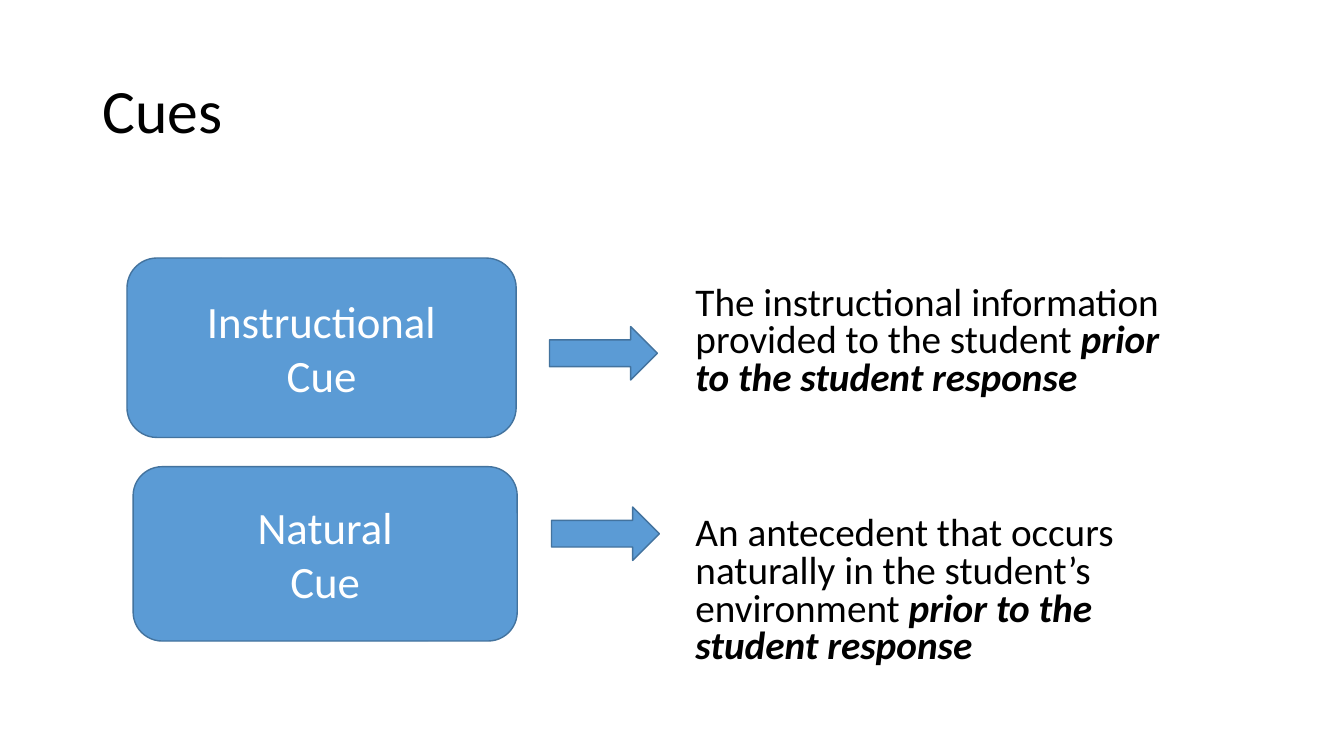
from dataclasses import dataclass

from pptx import Presentation
from pptx.dml.color import RGBColor
from pptx.enum.shapes import MSO_SHAPE
from pptx.enum.text import MSO_ANCHOR, PP_ALIGN
from pptx.util import Emu, Pt

ROUNDED = MSO_SHAPE.ROUNDED_RECTANGLE
ARROW = MSO_SHAPE.RIGHT_ARROW
TOP, MIDDLE = MSO_ANCHOR.TOP, MSO_ANCHOR.MIDDLE
LEFT, CENTER = PP_ALIGN.LEFT, PP_ALIGN.CENTER
EMU_PER_PX = 9144
BLANK_LAYOUT = 6


@dataclass(frozen=True)
class Theme:
    font: str = "Calibri"
    text: RGBColor = RGBColor(0, 0, 0)
    label: RGBColor = RGBColor(255, 255, 255)
    fill: RGBColor = RGBColor(0x5B, 0x9B, 0xD5)
    line: RGBColor = RGBColor(0x43, 0x73, 0x9E)
    title_size: int = 44
    label_size: int = 32
    body_size: int = 28


def set_attributes(target, values):
    for name, value in values.items():
        setattr(target, name, value)


class SlideBuilder:
    def __init__(self, slide, theme):
        self.slide = slide
        self.theme = theme

    def place(self, box):
        return [Emu(length * EMU_PER_PX) for length in box]

    def fill_text(self, shape, paragraphs, size, color, anchor, paragraph_format):
        frame = shape.text_frame
        set_attributes(frame, {"word_wrap": True, "vertical_anchor": anchor})
        for index, (runs, space_before) in enumerate(paragraphs):
            paragraph = frame.add_paragraph() if index else frame.paragraphs[0]
            set_attributes(paragraph, {**paragraph_format, "space_before": Pt(space_before)})
            for text, emphasis in runs:
                run = paragraph.add_run()
                run.text = text
                set_attributes(run.font, {
                    "name": self.theme.font, "size": Pt(size),
                    "bold": emphasis, "italic": emphasis,
                })
                run.font.color.rgb = color

    def text(self, box, paragraphs, size, anchor, line_spacing):
        shape = self.slide.shapes.add_textbox(*self.place(box))
        self.fill_text(shape, paragraphs, size, self.theme.text, anchor,
                       {"alignment": LEFT, "line_spacing": line_spacing})

    def block(self, kind, box):
        shape = self.slide.shapes.add_shape(kind, *self.place(box))
        shape.shadow.inherit = False
        shape.fill.solid()
        shape.fill.fore_color.rgb = self.theme.fill
        shape.line.color.rgb = self.theme.line
        shape.line.width = Pt(1)
        return shape

    def cue(self, box, words):
        shape = self.block(ROUNDED, box)
        paragraphs = [([(word, False)], 0) for word in words]
        self.fill_text(shape, paragraphs, self.theme.label_size, self.theme.label,
                       MIDDLE, {"alignment": CENTER})

    def arrow(self, left, top):
        self.block(ARROW, (left, top, 107, 53))


def main():
    presentation = Presentation()
    presentation.slide_width = Emu(1333 * EMU_PER_PX)
    presentation.slide_height = Emu(750 * EMU_PER_PX)
    slide = presentation.slides.add_slide(presentation.slide_layouts[BLANK_LAYOUT])
    theme = Theme()
    builder = SlideBuilder(slide, theme)

    builder.text((92, 40, 1150, 145), [([("Cues", False)], 0)],
                 theme.title_size, MIDDLE, 0.9)

    outcome = ("prior to the student response", True)
    definitions = [
        ([("The instructional information provided to the student ", False), outcome], 10),
        ([("An antecedent that occurs naturally in the student’s environment ", False),
          outcome], 84),
    ]
    builder.text((680, 279, 514, 394), definitions, theme.body_size, TOP, 0.8)

    cues = [
        ((126, 256, 386, 178), ("Instructional", "Cue"), (545, 324)),
        ((132, 463, 381, 173), ("Natural", "Cue"), (547, 503)),
    ]
    for box, words, arrow_corner in cues:
        builder.cue(box, words)
        builder.arrow(*arrow_corner)

    presentation.save("out.pptx")


if __name__ == "__main__":
    main()
